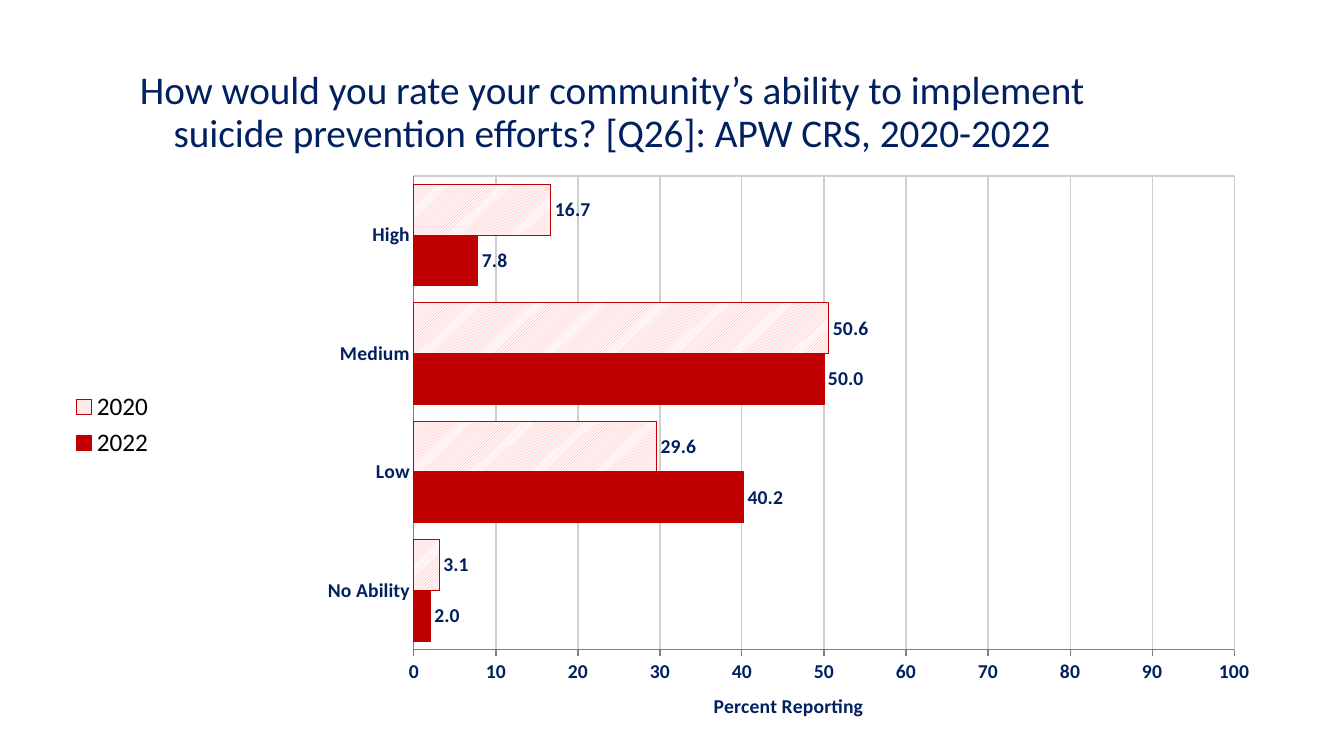
from lxml import etree
from pptx import Presentation
from pptx.chart.data import CategoryChartData
from pptx.dml.color import RGBColor
from pptx.enum.chart import (XL_CHART_TYPE, XL_LABEL_POSITION,
                             XL_LEGEND_POSITION, XL_TICK_MARK)
from pptx.enum.dml import MSO_PATTERN
from pptx.enum.text import MSO_ANCHOR, MSO_AUTO_SIZE, PP_ALIGN
from pptx.oxml.ns import qn
from pptx.util import Inches, Pt

FONT = "Calibri"
NAVY, RED, PINK = "002060", "C00000", "FF8F8F"
WHITE, BLACK, GRID, AXIS = "FFFFFF", "000000", "D0CECE", "7F7F7F"


def rgb(color):
    return RGBColor.from_string(color)


def style_font(font, size=14, color=NAVY, bold=True):
    font.name = FONT
    font.size = Pt(size)
    font.bold = bold
    font.color.rgb = rgb(color)


def write(tf, text, align=PP_ALIGN.CENTER, spacing=None, **style):
    """Fill a text frame with one formatted paragraph."""
    p = tf.paragraphs[0]
    p.alignment = align
    if spacing:
        p.line_spacing = spacing
    r = p.add_run()
    r.text = text
    style_font(r.font, **style)


def style_line(line, color, width=0.75):
    line.color.rgb = rgb(color)
    line.width = Pt(width)


def place_plot(chart, **box):
    """Fix the inner plot area, as fractions of the chart, and outline it."""
    plot_area = chart._chartSpace.chart.plotArea
    for old in plot_area.findall(qn("c:layout")):
        plot_area.remove(old)
    layout = etree.Element(qn("c:layout"))
    manual = etree.SubElement(layout, qn("c:manualLayout"))
    settings = {"layoutTarget": "inner", "xMode": "edge", "yMode": "edge", **box}
    for tag, value in settings.items():
        etree.SubElement(manual, qn(f"c:{tag}")).set("val", str(value))
    plot_area.insert(0, layout)

    sp_pr = etree.SubElement(plot_area, qn("c:spPr"))
    etree.SubElement(sp_pr, qn("a:noFill"))
    ln = etree.SubElement(sp_pr, qn("a:ln"), w=str(Pt(0.75)))
    fill = etree.SubElement(ln, qn("a:solidFill"))
    etree.SubElement(fill, qn("a:srgbClr"), val=GRID)


class SlideBuilder:
    def __init__(self, prs):
        self.slide = prs.slides.add_slide(prs.slide_layouts[5])

    def title(self, text, *box):
        sp = self.slide.shapes.title
        sp.left, sp.top, sp.width, sp.height = map(Inches, box)
        tf = sp.text_frame
        tf.word_wrap = True
        tf.auto_size = MSO_AUTO_SIZE.NONE
        tf.vertical_anchor = MSO_ANCHOR.MIDDLE
        write(tf, text, size=28, bold=False, spacing=0.9)

    def bar_chart(self, categories, series, *box):
        data = CategoryChartData(number_format="0.0")
        data.categories = categories
        for name, values in series.items():
            data.add_series(name, values)
        frame = self.slide.shapes.add_chart(
            XL_CHART_TYPE.BAR_CLUSTERED, *map(Inches, box), data)
        chart = frame.chart
        chart.has_title = False
        style_font(chart.font, 18, BLACK, bold=False)
        chart.has_legend = True
        chart.legend.position = XL_LEGEND_POSITION.LEFT
        chart.legend.include_in_layout = False
        plot = chart.plots[0]
        plot.gap_width = 33
        plot.overlap = 0
        plot.vary_by_categories = False
        for ser in plot.series:
            style_line(ser.format.line, RED)
            self.data_labels(ser)
        return chart

    def data_labels(self, ser):
        labels = ser.data_labels
        labels.show_value = True
        labels.number_format = "0.0"
        labels.number_format_is_linked = False
        labels.position = XL_LABEL_POSITION.OUTSIDE_END
        style_font(labels.font)

    def axes(self, chart, value_title):
        category, value = chart.category_axis, chart.value_axis
        for axis, tick in ((category, XL_TICK_MARK.NONE),
                           (value, XL_TICK_MARK.OUTSIDE)):
            axis.major_tick_mark = tick
            axis.minor_tick_mark = XL_TICK_MARK.NONE
            style_font(axis.tick_labels.font)
            style_line(axis.format.line, AXIS)
        category.has_major_gridlines = False
        value.minimum_scale, value.maximum_scale = 0, 100
        value.major_unit = 10
        value.tick_labels.number_format = "0"
        value.tick_labels.number_format_is_linked = False
        value.has_major_gridlines = True
        style_line(value.major_gridlines.format.line, GRID)
        write(value.axis_title.text_frame, value_title)


def main():
    prs = Presentation()
    prs.slide_width, prs.slide_height = Inches(13.33), Inches(7.5)
    s = SlideBuilder(prs)
    s.title("How would you rate your community’s ability to implement "
            "suicide prevention efforts? [Q26]: APW CRS, 2020-2022",
            0.92, 0.4, 10.3, 1.45)
    chart = s.bar_chart(
        ["No Ability", "Low", "Medium", "High"],
        {"2022": (2.0, 40.2, 50.0, 7.8), "2020": (3.1, 29.6, 50.6, 16.7)},
        0.59, 1.24, 12.25, 5.95)
    s.axes(chart, "Percent Reporting")
    place_plot(chart, x=0.287, y=0.085, w=0.664, h=0.79)

    fill_2022, fill_2020 = (ser.format.fill for ser in chart.plots[0].series)
    fill_2022.solid()
    fill_2022.fore_color.rgb = rgb(RED)
    fill_2020.patterned()
    fill_2020.pattern = MSO_PATTERN.LIGHT_UPWARD_DIAGONAL
    fill_2020.fore_color.rgb = rgb(PINK)
    fill_2020.back_color.rgb = rgb(WHITE)
    prs.save("out.pptx")


if __name__ == "__main__":
    main()
